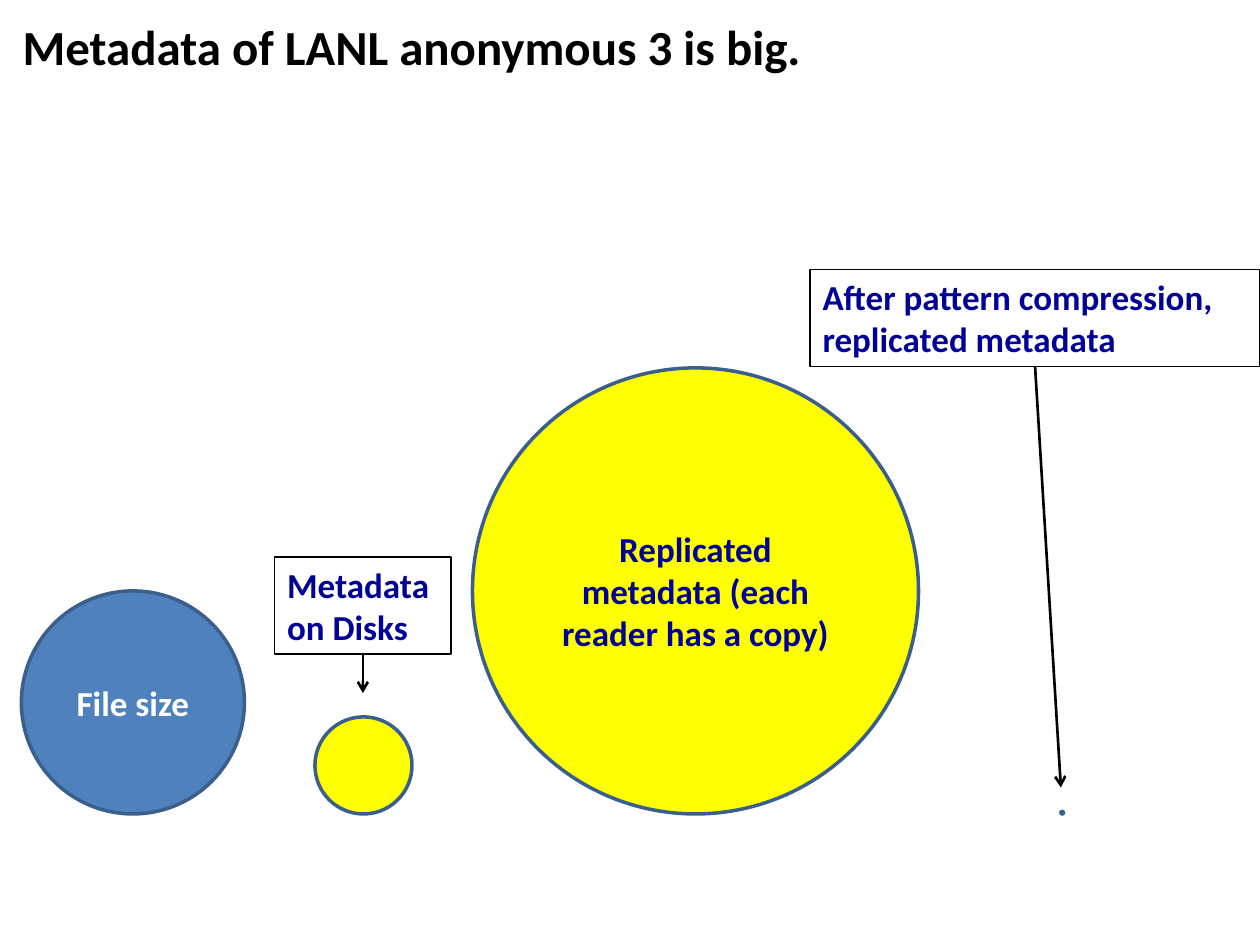
from lxml.etree import SubElement
from pptx import Presentation
from pptx.dml.color import RGBColor
from pptx.enum.shapes import MSO_CONNECTOR, MSO_SHAPE
from pptx.enum.text import MSO_ANCHOR as ANCHOR, MSO_AUTO_SIZE as AUTO, PP_ALIGN as ALIGN
from pptx.oxml.ns import qn
from pptx.util import Inches, Pt

BASELINE = 6.46
BLUE, YELLOW, NAVY, EDGE = "4F81BD", "FFFF00", "000099", "3A5F8C"
BLACK, WHITE = "000000", "FFFFFF"


def rgb(value):
    """Return the colour for a hex string."""
    return RGBColor.from_string(value)


def set_line(s, color, width):
    """Give a shape or connector a solid line."""
    s.line.color.rgb = rgb(color)
    s.line.width = Pt(width)


def set_text(tf, lines, color, size=20, align=ALIGN.LEFT):
    """Write bold lines, one paragraph each."""
    tf.text = "\n".join(lines)
    font_values = {"name": "Calibri", "size": Pt(size), "bold": True}
    for p in tf.paragraphs:
        p.alignment = align
        for r in p.runs:
            for name, value in font_values.items():
                setattr(r.font, name, value)
            r.font.color.rgb = rgb(color)


def add_title(slide, text):
    """Place and format the slide title."""
    s = slide.shapes.title
    box = {"left": 0.08, "top": 0.08, "width": 9.84, "height": 0.57}
    for name, value in box.items():
        setattr(s, name, Inches(value))
    tf = s.text_frame
    set_text(tf, [text], BLACK, 28)
    frame_values = {"auto_size": AUTO.NONE, "vertical_anchor": ANCHOR.TOP, "word_wrap": True}
    for name, value in frame_values.items():
        setattr(tf, name, value)


def add_circle(slide, left, size, fill, text=None, color=NAVY):
    """Add a circle standing on the common baseline."""
    s = slide.shapes.add_shape(MSO_SHAPE.OVAL, Inches(left), Inches(BASELINE - size),
                               Inches(size), Inches(size))
    s.shadow.inherit = False
    s.fill.solid()
    s.fill.fore_color.rgb = rgb(fill)
    set_line(s, EDGE, 2)
    if text:
        s.text_frame.vertical_anchor = ANCHOR.MIDDLE
        set_text(s.text_frame, [text], color, align=ALIGN.CENTER)


def add_label(slide, left, top, width, lines, wrap):
    """Add an outlined label box."""
    s = slide.shapes.add_textbox(Inches(left), Inches(top), Inches(width), Inches(0.77))
    set_line(s, BLACK, 0.75)
    set_text(s.text_frame, lines, NAVY)
    s.text_frame.word_wrap = wrap
    s.text_frame.auto_size = AUTO.SHAPE_TO_FIT_TEXT
    return s


def add_arrow(slide, label, x, y):
    """Draw an arrow from the bottom of a label to a point."""
    s = slide.shapes.add_connector(MSO_CONNECTOR.STRAIGHT, label.left, label.top,
                                   Inches(x), Inches(y))
    s.begin_connect(label, 2)
    set_line(s, BLACK, 1.5)
    SubElement(s.line._get_or_add_ln(), qn("a:tailEnd"), type="arrow")
    SubElement(s._element.spPr, qn("a:effectLst"))


def main():
    """Build the slide and save it."""
    prs = Presentation()
    prs.slide_width, prs.slide_height = Inches(10), Inches(7.5)
    slide = prs.slides.add_slide(prs.slide_layouts[5])
    add_title(slide, "Metadata of LANL anonymous 3 is big.")
    add_circle(slide, 3.75, 3.54, YELLOW, "Replicated metadata (each reader has a copy)")
    add_circle(slide, 0.17, 1.77, BLUE, "File size", WHITE)
    add_circle(slide, 2.5, 0.77, YELLOW)
    add_circle(slide, 8.42, 0.02, BLUE)
    disk = add_label(slide, 2.18, 4.42, 1.4, ["Metadata", "on Disks"], False)
    compressed = add_label(slide, 6.43, 2.14, 3.57,
                           ["After pattern compression,", "replicated metadata"], True)
    add_arrow(slide, compressed, 8.42, 6.25)
    add_arrow(slide, disk, 2.88, 5.5)
    prs.save("out.pptx")


if __name__ == "__main__":
    main()
